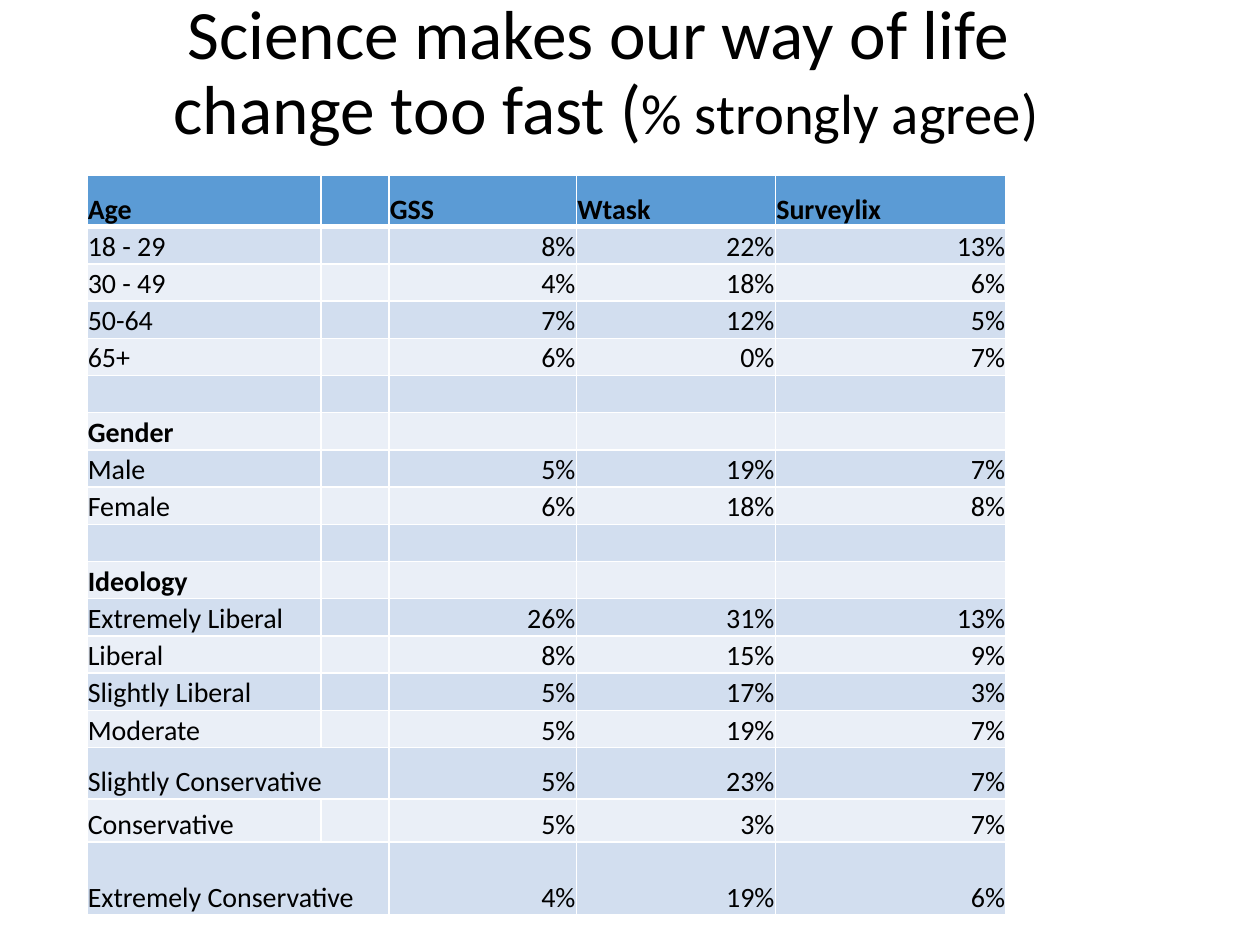
from lxml import etree
from pptx import Presentation
from pptx.dml.color import RGBColor
from pptx.enum.text import MSO_ANCHOR, MSO_AUTO_SIZE, PP_ALIGN
from pptx.oxml.ns import qn
from pptx.util import Cm, Pt

HUES = {"text": "000000", "head": "5B9BD5", "odd": "D2DEEF",
        "even": "EAEFF7", "line": "FFFFFF"}
FONT = "Calibri"

COLS = [4.72, 1.37, 3.78, 4.01, 4.65]
ROW = 0.75
TALL = {0: 1.04, 15: 1.04, 16: 0.86, 17: 1.47}
WIDE = {15, 17}  # rows whose label spans two columns
BOLD = {"Age", "Gender", "Ideology"}
DATA = [
    ("Age", "GSS", "Wtask", "Surveylix"),
    ("18 - 29", "8%", "22%", "13%"),
    ("30 - 49", "4%", "18%", "6%"),
    ("50-64", "7%", "12%", "5%"),
    ("65+", "6%", "0%", "7%"),
    ("", "", "", ""),
    ("Gender", "", "", ""),
    ("Male", "5%", "19%", "7%"),
    ("Female", "6%", "18%", "8%"),
    ("", "", "", ""),
    ("Ideology", "", "", ""),
    ("Extremely Liberal", "26%", "31%", "13%"),
    ("Liberal", "8%", "15%", "9%"),
    ("Slightly Liberal", "5%", "17%", "3%"),
    ("Moderate", "5%", "19%", "7%"),
    ("Slightly Conservative", "5%", "23%", "7%"),
    ("Conservative", "5%", "3%", "7%"),
    ("Extremely Conservative", "4%", "19%", "6%"),
]


class Deck:
    def __init__(self, wide, high):
        self.show = Presentation()
        self.show.slide_width, self.show.slide_height = Cm(wide), Cm(high)
        self.slide = self.show.slides.add_slide(self.show.slide_layouts[5])

    def run(self, para, text, size, bold=False):
        run = para.add_run()
        run.text = text
        font = run.font
        font.name, font.size, font.bold = FONT, Pt(size), bold
        font.color.rgb = RGBColor.from_string(HUES["text"])

    def title(self, left, top, wide, high, lines):
        box = self.slide.shapes.title
        box.left, box.top, box.width, box.height = map(Cm, (left, top, wide, high))
        frame = box.text_frame
        frame.word_wrap = True
        frame.auto_size = MSO_AUTO_SIZE.NONE
        frame.vertical_anchor = MSO_ANCHOR.MIDDLE
        para = frame.paragraphs[0]
        para.alignment, para.line_spacing = PP_ALIGN.CENTER, 0.9
        for i, line in enumerate(lines):
            if i:
                para.add_line_break()
            for text, size in line:
                self.run(para, text, size)

    def edge(self, cell, side, width):
        props = cell._tc.get_or_add_tcPr()
        line = etree.SubElement(props, qn(f"a:ln{side}"), w=str(Pt(width)))
        fill = etree.SubElement(line, qn("a:solidFill"))
        etree.SubElement(fill, qn("a:srgbClr"), val=HUES["line"])

    def cell(self, cell, text, row, size=16):
        cell.margin_left = cell.margin_right = cell.margin_top = Cm(0.02)
        cell.margin_bottom = 0
        cell.vertical_anchor = MSO_ANCHOR.BOTTOM
        for side in "LRTB":
            thick = (row, side) in ((0, "B"), (1, "T"))
            self.edge(cell, side, 3 if thick else 1)
        hue = "head" if row == 0 else "odd" if row % 2 else "even"
        cell.fill.solid()
        cell.fill.fore_color.rgb = RGBColor.from_string(HUES[hue])
        para = cell.text_frame.paragraphs[0]
        if text:
            para.alignment = PP_ALIGN.RIGHT if text.endswith("%") else PP_ALIGN.LEFT
            self.run(para, text, size, row == 0 or text in BOLD)
        else:  # keeps an empty row from growing
            etree.SubElement(para._p, qn("a:endParaRPr"), sz=str(size * 100))

    def table(self, left, top, data):
        highs = [TALL.get(i, ROW) for i in range(len(data))]
        grid = self.slide.shapes.add_table(
            len(data), len(COLS), Cm(left), Cm(top),
            Cm(sum(COLS)), Cm(sum(highs))).table
        for col, wide in zip(grid.columns, COLS):
            col.width = Cm(wide)
        for i, (label, *values) in enumerate(data):
            grid.rows[i].height = Cm(highs[i])
            for j, text in enumerate([label, "", *values]):
                self.cell(grid.cell(i, j), text, i)
            if i in WIDE:
                grid.cell(i, 0).merge(grid.cell(i, 1))


def main():
    deck = Deck(25.4, 19.05)
    # Heading
    deck.title(1.27, 0.84, 21.9, 1.32, [
        [("Science makes our way of life ", 39.6)],
        [("change too fast (", 39.6), ("% strongly agree)", 32.4)],
    ])
    # Shares by age, gender and ideology
    deck.table(1.75, 3.53, DATA)
    deck.show.save("out.pptx")


if __name__ == "__main__":
    main()
